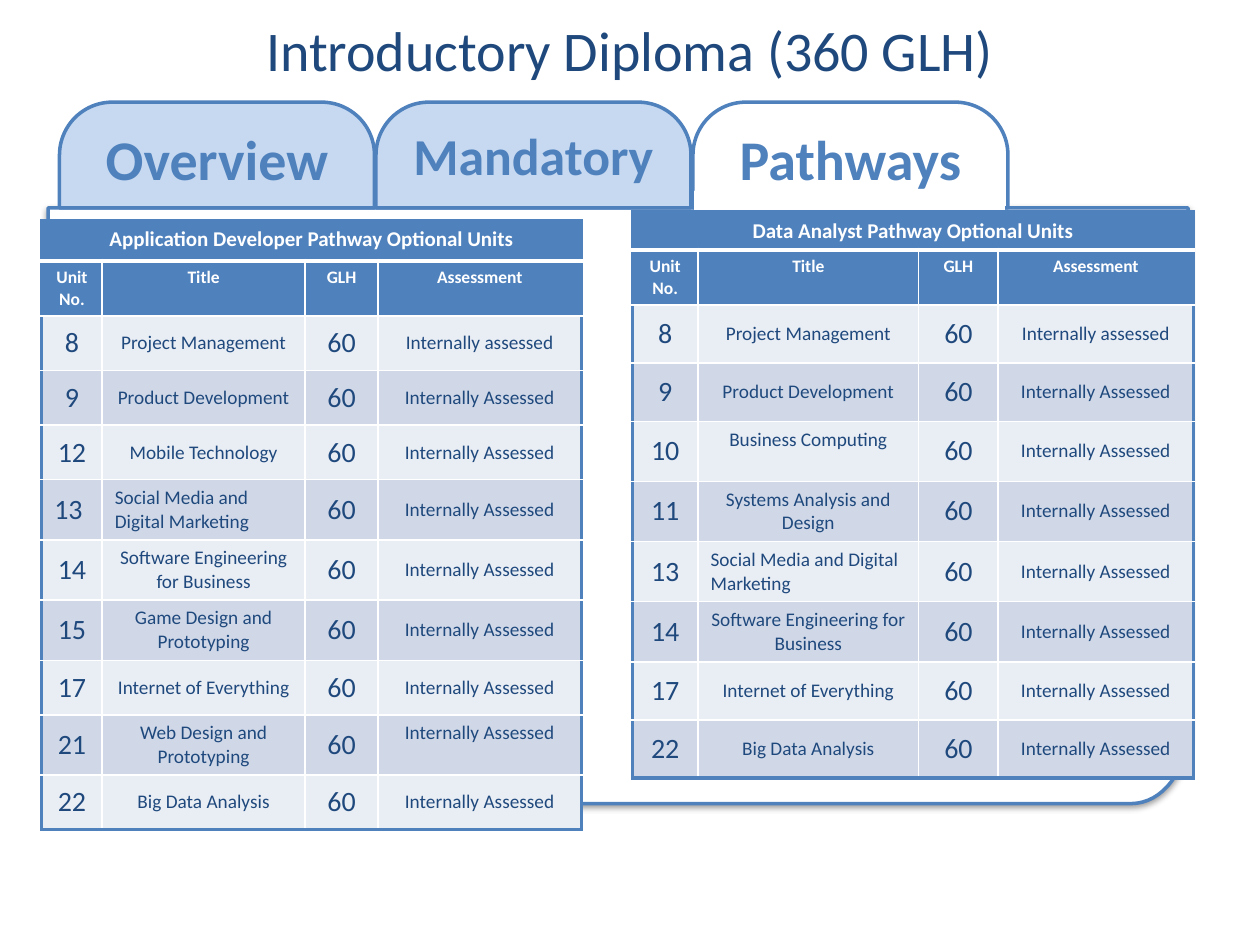
from copy import deepcopy
from math import cos, pi, sin

from lxml import etree
from pptx import Presentation
from pptx.dml.color import RGBColor
from pptx.enum import shapes, text
from pptx.oxml import ns
from pptx.util import Cm, Pt

FONT = "Calibri"
BLUE = "4F81BD"
NAVY = "1F497D"
WHITE = "FFFFFF"
PALE_BLUE = "C6D9F1"
BANDS = ("E9EDF4", "D0D8E8")
HEADINGS = ("Unit\vNo.", "Title", "GLH", "Assessment")
CENTER = text.PP_ALIGN.CENTER
LEFT = text.PP_ALIGN.LEFT

TAB_TOP, TAB_WIDTH, TAB_HEIGHT = 2.06, 6.35, 2.13

DEVELOPER_UNITS = [
    ("8", "Project Management", 1.1),
    ("9", "Product Development", 1.1),
    ("12", "Mobile Technology", 1.1),
    ("13", "Social Media and Digital Marketing", 1.21),
    ("14", "Software Engineering for Business", 1.21),
    ("15", "Game Design and Prototyping", 1.21),
    ("17", "Internet of Everything", 1.1),
    ("21", "Web Design and Prototyping", 1.21),
    ("22", "Big Data Analysis", 1.1),
]
ANALYST_UNITS = [
    ("8", "Project Management", 1.17),
    ("9", "Product Development", 1.17),
    ("10", "Business Computing", 1.21),
    ("11", "Systems Analysis and Design", 1.21),
    ("13", "Social Media and Digital Marketing", 1.21),
    ("14", "Software Engineering for Business", 1.21),
    ("17", "Internet of Everything", 1.17),
    ("22", "Big Data Analysis", 1.17),
]


def rgb(value):
    return RGBColor.from_string(value)


def add_element(parent, tag, **attributes):
    return etree.SubElement(parent, ns.qn(tag), **attributes)


def place(shape, left, top, width, height):
    shape.left, shape.top = Cm(left), Cm(top)
    shape.width, shape.height = Cm(width), Cm(height)


def paint(shape, fill, line):
    shape.shadow.inherit = False
    shape.fill.solid()
    shape.fill.fore_color.rgb = rgb(fill)
    shape.line.color.rgb = rgb(line)
    shape.line.width = Pt(2)


def write(frame, content, size, color, bold=False, align=CENTER):
    frame.text = content
    paragraph = frame.paragraphs[0]
    paragraph.alignment = align
    for run in paragraph.runs:
        run.font.name = FONT
        run.font.size = Pt(size)
        run.font.bold = bold
        run.font.color.rgb = rgb(color)


def add_title(slide):
    title = slide.shapes.title
    place(title, 0, 0, 25.4, 2)
    write(title.text_frame, "Introductory Diploma (360 GLH)", 32, NAVY)
    title.text_frame.vertical_anchor = text.MSO_ANCHOR.MIDDLE


def add_panel(slide):
    left, top, right, bottom = 0.97, 4.19, 23.95, 16.2
    radius_x, radius_y, steps = 1.14, 1.52, 16
    angles = [pi / 2 * step / steps for step in range(steps + 1)]
    arc = [(radius_x * cos(angle), radius_y * sin(angle)) for angle in angles]
    right_corner = [(right - radius_x + x, bottom - radius_y + y) for x, y in arc]
    left_corner = [(left + radius_x - x, bottom - radius_y + y) for x, y in reversed(arc)]
    points = [(right, top)] + right_corner + left_corner
    builder = slide.shapes.build_freeform(Cm(left), Cm(top))
    builder.add_line_segments([(Cm(x), Cm(y)) for x, y in points], close=True)
    panel = builder.convert_to_shape()
    paint(panel, WHITE, BLUE)
    effects = panel.element.spPr.find(ns.qn("a:effectLst"))
    shadow = add_element(effects, "a:outerShdw", blurRad="40000", dist="20000",
                         dir="5400000", rotWithShape="0")
    color = add_element(shadow, "a:srgbClr", val="000000")
    add_element(color, "a:alpha", val="38000")


def format_tab(tab, label, size, fill):
    paint(tab, fill, BLUE)
    frame = tab.text_frame
    frame.word_wrap = True
    frame.vertical_anchor = text.MSO_ANCHOR.TOP
    frame.margin_top = Cm(0.13)
    write(frame, label, size, BLUE, bold=True)
    frame.paragraphs[0].space_before = Pt(0)


def add_tab(slide, left, label, size, fill):
    tab = slide.shapes.add_shape(shapes.MSO_SHAPE.ROUND_2_SAME_RECTANGLE,
                                 Cm(left), Cm(TAB_TOP), Cm(TAB_WIDTH), Cm(TAB_HEIGHT))
    tab.adjustments[0] = 0.5
    format_tab(tab, label, size, fill)
    return tab


def add_body_tab(slide, left, label, size, model):
    tab = slide.placeholders[1]
    place(tab, left, TAB_TOP, TAB_WIDTH, TAB_HEIGHT)
    properties = tab.element.spPr
    properties.insert(1, deepcopy(model.element.spPr.find(ns.qn("a:prstGeom"))))
    format_tab(tab, label, size, PALE_BLUE)
    bullet_properties = tab.text_frame.paragraphs[0]._p.get_or_add_pPr()
    bullet_properties.set("marL", "0")
    bullet_properties.set("indent", "0")
    add_element(bullet_properties, "a:buNone")
    model.element.addnext(tab.element)


def add_tab_opening(slide):
    opening = slide.shapes.add_shape(shapes.MSO_SHAPE.RECTANGLE,
                                     Cm(14.02), Cm(3.86), Cm(6.2), Cm(0.38))
    paint(opening, WHITE, WHITE)


def set_borders(cell, **borders):
    properties = cell._tc.get_or_add_tcPr()
    for index, side in enumerate("LRTB"):
        color, width = borders[side]
        line = etree.Element(ns.qn(f"a:ln{side}"), w=str(Pt(width)))
        fill = add_element(line, "a:solidFill")
        add_element(fill, "a:srgbClr", val=color)
        properties.insert(index, line)


def format_cell(cell, row, column, last_row):
    fill = BLUE if row < 2 else BANDS[row % 2]
    cell.fill.solid()
    cell.fill.fore_color.rgb = rgb(fill)
    outer, inner, divider = (BLUE, 2.25), (WHITE, 1), (WHITE, 3)
    set_borders(
        cell,
        L=outer if row == 0 or column == 0 else inner,
        R=outer if row == 0 or column == 3 else inner,
        T=outer if row == 0 else divider if row == 1 else inner,
        B=divider if row == 0 else outer if row == last_row else inner,
    )


def add_unit_table(slide, left, top, widths, heading, heading_height, units, left_aligned, raised):
    heights = [heading_height, 1.11] + [height for _, _, height in units]
    graphic = slide.shapes.add_table(len(heights), 4, Cm(left), Cm(top),
                                     Cm(sum(widths)), Cm(sum(heights)))
    table = graphic.table
    for column, width in zip(table.columns, widths):
        column.width = Cm(width)
    for row, height in zip(table.rows, heights):
        row.height = Cm(height)
    for row in range(len(heights)):
        for column in range(4):
            format_cell(table.cell(row, column), row, column, len(heights) - 1)

    table.cell(0, 0).merge(table.cell(0, 3))
    write(table.cell(0, 0).text_frame, heading, 12, WHITE, bold=True)
    for column, label in enumerate(HEADINGS):
        write(table.cell(1, column).text_frame, label, 10, WHITE, bold=True)
    for index, (unit, title, _) in enumerate(units):
        assessment = "Internally Assessed" if index else "Internally assessed"
        for column, content in enumerate((unit, title, "60", assessment)):
            cell = table.cell(index + 2, column)
            cell.vertical_anchor = text.MSO_ANCHOR.MIDDLE
            align = LEFT if (unit, column) in left_aligned else CENTER
            write(cell.text_frame, content, 11 if column % 2 else 16, NAVY, align=align)
            if (unit, column) == raised:
                cell.margin_bottom = Cm(0.6)


def main():
    presentation = Presentation()
    presentation.slide_width, presentation.slide_height = Cm(25.4), Cm(19.05)
    slide = presentation.slides.add_slide(presentation.slide_layouts[1])
    add_title(slide)
    add_panel(slide)
    add_tab(slide, 13.97, "Pathways", 32, WHITE)
    mandatory = add_tab(slide, 7.58, "Mandatory", 29.6, PALE_BLUE)
    add_body_tab(slide, 1.2, "Overview", 32, mandatory)
    add_tab_opening(slide)
    add_unit_table(slide, 0.84, 4.45, (1.22, 4.09, 1.47, 4.1),
                   "Application Developer Pathway Optional Units", 0.81,
                   DEVELOPER_UNITS, {("13", 0), ("13", 1)}, ("21", 3))
    add_unit_table(slide, 12.75, 4.27, (1.32, 4.45, 1.6, 3.94),
                   "Data Analyst Pathway Optional Units", 0.77,
                   ANALYST_UNITS, {("13", 1)}, ("10", 1))
    presentation.save("out.pptx")


if __name__ == "__main__":
    main()
